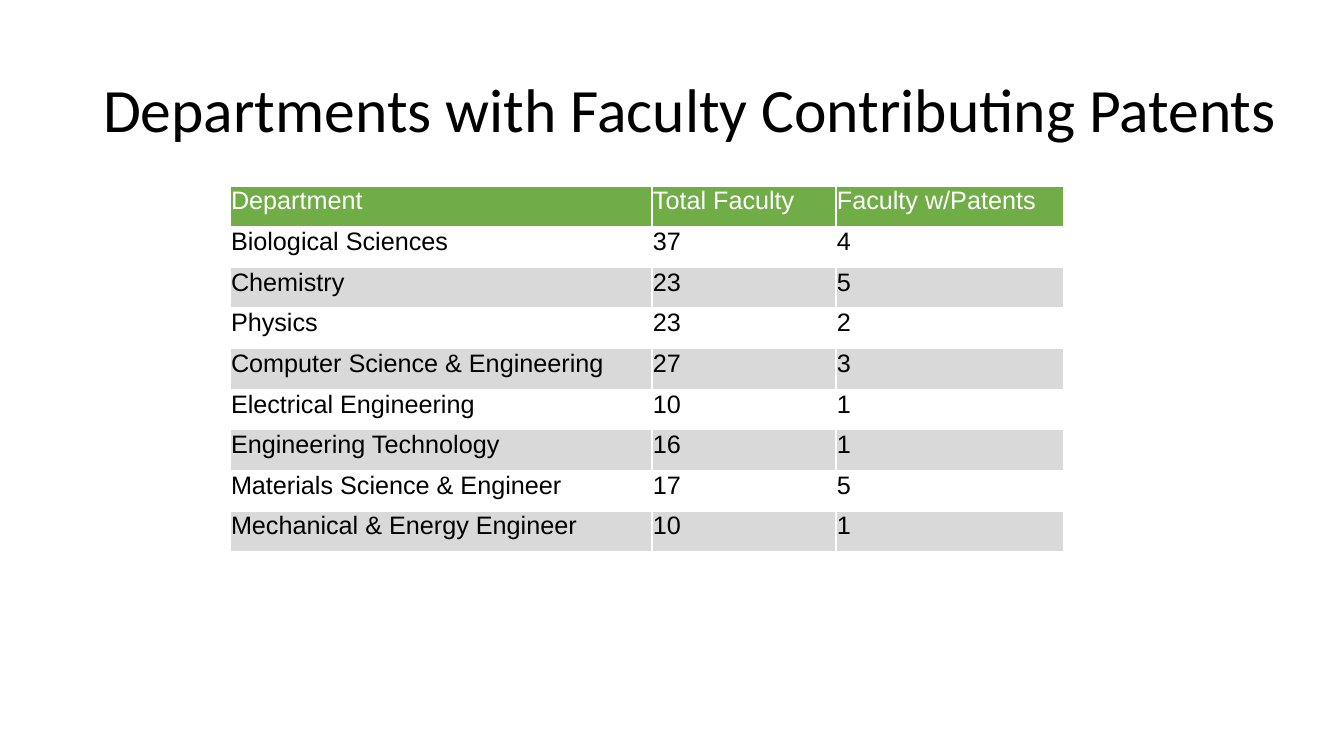
import pptx
import pptx.dml.color
import pptx.enum.text
import pptx.oxml
import pptx.oxml.ns
import pptx.util

PX = 914400 / 100.8
THEME = {
    "title_font": "Calibri", "title_size": 44,
    "table_font": "Arial", "table_size": 18,
    "text": "000000", "header_text": "FFFFFF",
    "header_fill": "70AD47", "band_fill": "D9D9D9", "border": "FFFFFF",
}
ROWS = [
    ("Department", "Total Faculty", "Faculty w/Patents"),
    ("Biological Sciences", "37", "4"),
    ("Chemistry", "23", "5"),
    ("Physics", "23", "2"),
    ("Computer Science & Engineering", "27", "3"),
    ("Electrical Engineering", "10", "1"),
    ("Engineering Technology", "16", "1"),
    ("Materials Science & Engineer", "17", "5"),
    ("Mechanical & Energy Engineer", "10", "1"),
]
COLUMN_WIDTHS = [422, 184, 228]


def px(length):
    return pptx.util.Emu(round(length * PX))


def write(frame, text, *, font, size, color, spacing=1.0):
    paragraph = frame.paragraphs[0]
    paragraph.alignment = pptx.enum.text.PP_ALIGN.LEFT
    paragraph.line_spacing = spacing
    run = paragraph.add_run()
    run.text = text
    run.font.name = font
    run.font.size = pptx.util.Pt(size)
    run.font.bold = False
    run.font.color.rgb = pptx.dml.color.RGBColor.from_string(color)


deck = pptx.Presentation()
deck.slide_width, deck.slide_height = px(1344), px(756)
slide = deck.slides.add_slide(deck.slide_layouts[5])

title = slide.shapes.title
title.left, title.top, title.width, title.height = px(93), px(40), px(1273), px(146)
title.text_frame.word_wrap = True
title.text_frame.auto_size = pptx.enum.text.MSO_AUTO_SIZE.NONE
title.text_frame.vertical_anchor = pptx.enum.text.MSO_ANCHOR.MIDDLE
write(title.text_frame, "Departments with Faculty Contributing Patents",
      font=THEME["title_font"], size=THEME["title_size"],
      color=THEME["text"], spacing=0.9)

departments = slide.shapes.add_table(
    len(ROWS), len(COLUMN_WIDTHS), px(230), px(186),
    px(sum(COLUMN_WIDTHS)), px(366)).table
departments.first_row = True
departments.horz_banding = False
for column, width in zip(departments.columns, COLUMN_WIDTHS):
    column.width = px(width)

for row_index, values in enumerate(ROWS):
    is_header = row_index == 0
    for column_index, value in enumerate(values):
        cell = departments.cell(row_index, column_index)
        cell.margin_left = cell.margin_right = cell.margin_top = px(1)
        cell.margin_bottom = 0
        cell.vertical_anchor = pptx.enum.text.MSO_ANCHOR.TOP
        write(cell.text_frame, value,
              font=THEME["table_font"], size=THEME["table_size"],
              color=THEME["header_text" if is_header else "text"])

        cell_properties = cell._tc.get_or_add_tcPr()
        for side in ("lnL", "lnR", "lnT", "lnB"):
            cell_properties.append(pptx.oxml.parse_xml(
                f'<a:{side} {pptx.oxml.ns.nsdecls("a")} w="{pptx.util.Pt(1)}">'
                f'<a:solidFill><a:srgbClr val="{THEME["border"]}"/></a:solidFill>'
                f'</a:{side}>'))

        if row_index % 2:
            cell.fill.background()
        else:
            cell.fill.solid()
            cell.fill.fore_color.rgb = pptx.dml.color.RGBColor.from_string(
                THEME["header_fill" if is_header else "band_fill"])

deck.save("out.pptx")
